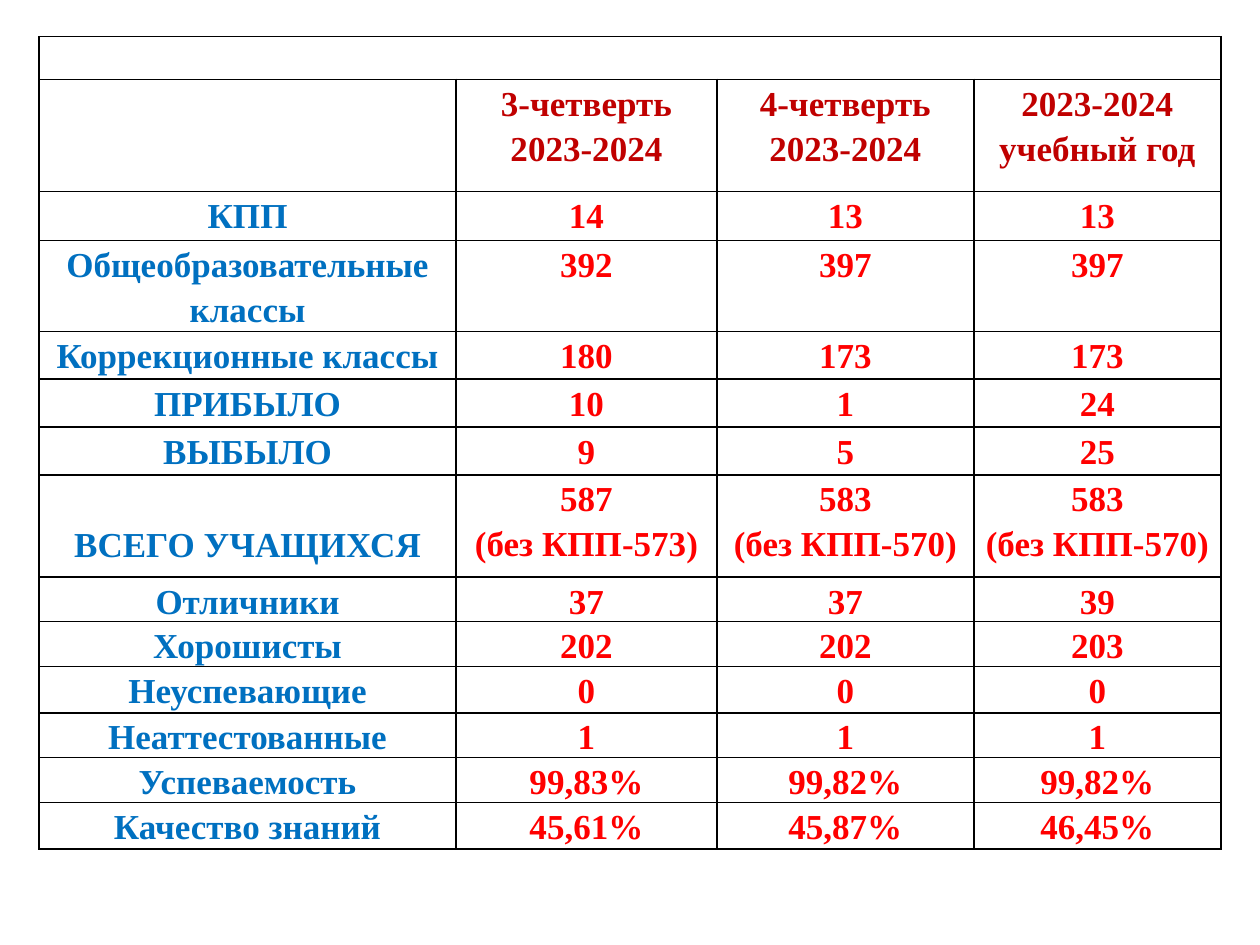
from lxml.etree import SubElement
from pptx import Presentation
from pptx.dml.color import RGBColor
from pptx.enum.text import PP_ALIGN as Align
from pptx.oxml.ns import qn
from pptx.util import Inches, Pt

COLORS = {"border": "000000", "header": "C00000", "label": "0070C0", "value": "FF0000"}
FONT = "Times New Roman"
COLUMN_WIDTHS = [3.31, 2.07, 2.04, 1.96]
ROW_HEIGHTS = [0.34, 0.89, 0.39, 0.72, 0.38, 0.38, 0.38, 0.81,
               0.34, 0.34, 0.37, 0.34, 0.34, 0.37]
TOTAL_LABEL = "ВСЕГО УЧАЩИХСЯ"
ROWS = [
    ["", "", "", ""],
    ["", "3-четверть 2023-2024", "4-четверть 2023-2024", "2023-2024 учебный год"],
    ["КПП", "14", "13", "13"],
    ["Общеобразовательные классы", "392", "397", "397"],
    ["Коррекционные классы", "180", "173", "173"],
    ["ПРИБЫЛО", "10", "1", "24"],
    ["ВЫБЫЛО", "9", "5", "25"],
    [TOTAL_LABEL, "587\n(без КПП-573)", "583\n(без КПП-570)", "583\n(без КПП-570)"],
    ["Отличники", "37", "37", "39"],
    ["Хорошисты", "202", "202", "203"],
    ["Неуспевающие", "0", "0", "0"],
    ["Неаттестованные", "1", "1", "1"],
    ["Успеваемость", "99,83%", "99,82%", "99,82%"],
    ["Качество знаний", "45,61%", "45,87%", "46,45%"],
]


def write_text(frame, text, color, size=20, bold=True, align=Align.CENTER, spacing=1.15):
    """Write each line of text as its own paragraph."""
    for index, line in enumerate(text.split("\n")):
        para = frame.paragraphs[0] if index == 0 else frame.add_paragraph()
        para.alignment = align
        para.line_spacing = spacing
        span = para.add_run()
        span.text = line
        span.font.name = FONT
        span.font.size = Pt(size)
        span.font.bold = bold
        span.font.color.rgb = RGBColor.from_string(color)


def style_cell(cell):
    """Give the cell thin borders, no fill and tight margins."""
    cell.margin_left = cell.margin_right = Inches(0.07)
    cell.margin_top = cell.margin_bottom = 0
    properties = cell._tc.get_or_add_tcPr()
    for side in ("a:lnL", "a:lnR", "a:lnT", "a:lnB"):
        line = SubElement(properties, qn(side), w=str(Pt(1)))
        fill = SubElement(line, qn("a:solidFill"))
        SubElement(fill, qn("a:srgbClr"), val=COLORS["border"])
    cell.fill.background()


def add_results_table(page, left, top, width, height):
    table = page.shapes.add_table(len(ROWS), len(COLUMN_WIDTHS),
                                  left, top, width, height).table
    table.first_row = table.horz_banding = False
    for column, column_width in zip(table.columns, COLUMN_WIDTHS):
        column.width = Inches(column_width)
    for row, row_height in zip(table.rows, ROW_HEIGHTS):
        row.height = Inches(row_height)
    for row_index, texts in enumerate(ROWS):
        for column_index, text in enumerate(texts):
            cell = table.cell(row_index, column_index)
            style_cell(cell)
            role = "header" if row_index == 1 else "value" if column_index else "label"
            if text:
                write_text(cell.text_frame, text, COLORS[role])
            if text == TOTAL_LABEL:
                cell.margin_top = Inches(0.36)
    table.cell(0, 0).merge(table.cell(0, len(COLUMN_WIDTHS) - 1))


def main():
    deck = Presentation()
    deck.slide_width, deck.slide_height = Inches(10), Inches(7.5)
    page = deck.slides.add_slide(deck.slide_layouts[6])
    add_results_table(page, Inches(0.31), Inches(0.29),
                      Inches(sum(COLUMN_WIDTHS)), Inches(sum(ROW_HEIGHTS)))
    deck.save("out.pptx")


if __name__ == "__main__":
    main()
